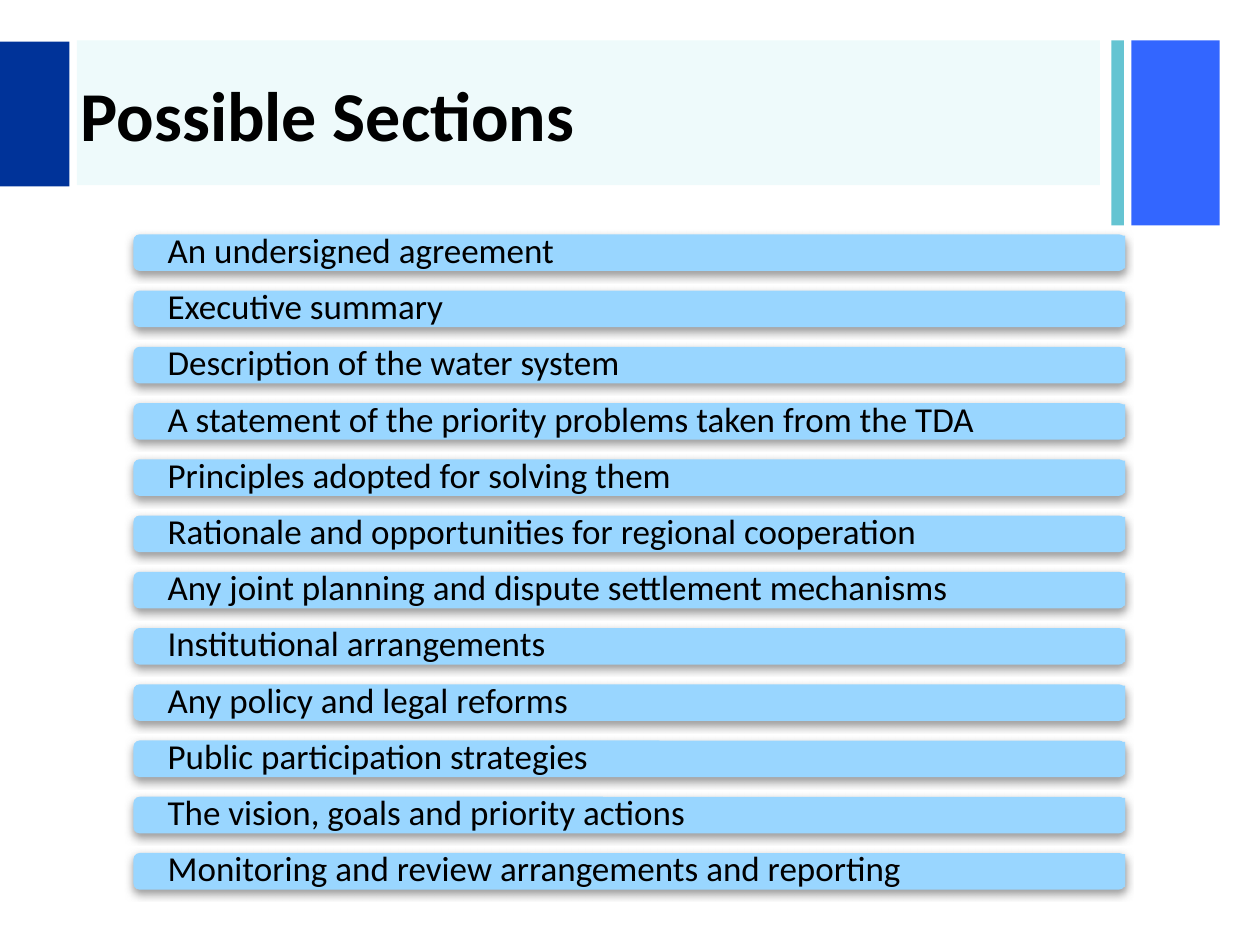
from lxml import etree
from pptx import Presentation
from pptx.dml.color import RGBColor
from pptx.enum.shapes import MSO_SHAPE
from pptx.enum.text import MSO_ANCHOR, PP_ALIGN
from pptx.oxml import parse_xml
from pptx.oxml.ns import nsdecls, qn
from pptx.util import Inches, Pt

RECTANGLE = MSO_SHAPE.RECTANGLE
ROUNDED = MSO_SHAPE.ROUNDED_RECTANGLE
MIDDLE = MSO_ANCHOR.MIDDLE
LEFT = PP_ALIGN.LEFT

BLACK = RGBColor(0x00, 0x00, 0x00)
NAVY = RGBColor(0x00, 0x33, 0x99)
BLUE = RGBColor(0x33, 0x66, 0xFF)
TEAL = RGBColor(0x65, 0xC4, 0xD2)
AQUA = RGBColor(0x14, 0xC5, 0xD0)
SKY = RGBColor(0x99, 0xD6, 0xFF)

TITLE_ONLY = 5
FIRST_TOP, LAST_TOP = 1.86, 6.77
SECTIONS = [
    "An undersigned agreement",
    "Executive summary",
    "Description of the water system",
    "A statement of the priority problems taken from the TDA",
    "Principles adopted for solving them",
    "Rationale and opportunities for regional cooperation",
    "Any joint planning and dispute settlement mechanisms",
    "Institutional arrangements",
    "Any policy and legal reforms",
    "Public participation strategies",
    "The vision, goals and priority actions",
    "Monitoring and review arrangements and reporting",
]
SHADOW = (
    f'<a:effectLst {nsdecls("a")}><a:outerShdw blurRad="{Pt(5)}" dist="{Pt(2)}" '
    'dir="5400000" rotWithShape="0"><a:srgbClr val="808080"><a:alpha val="75000"/>'
    '</a:srgbClr></a:outerShdw></a:effectLst>'
)


def write_text(shape, text, size, bold=False, inset=0.1, vertical_inset=0.05,
               line_spacing=None, space_after=None):
    frame = shape.text_frame
    frame.word_wrap = True
    frame.vertical_anchor = MIDDLE
    frame.margin_left = frame.margin_right = Inches(inset)
    frame.margin_top = frame.margin_bottom = Inches(vertical_inset)
    paragraph = frame.paragraphs[0]
    paragraph.alignment = LEFT
    paragraph.line_spacing = line_spacing
    paragraph.space_after = space_after
    run = paragraph.add_run()
    run.text = text
    run.font.name = "Calibri"
    run.font.size = Pt(size)
    run.font.bold = bold
    run.font.color.rgb = BLACK


class SlideBuilder:
    """Draws the slide's elements in one shared style."""

    def __init__(self, slide):
        self.slide = slide

    def block(self, left, top, width, height, color, kind=RECTANGLE, shapes=None, opacity=None):
        shapes = shapes or self.slide.shapes
        shape = shapes.add_shape(kind, Inches(left), Inches(top), Inches(width), Inches(height))
        shape.shadow.inherit = False
        shape.fill.solid()
        shape.fill.fore_color.rgb = color
        shape.line.fill.background()
        if opacity is not None:
            fill_color = shape.element.spPr.find(qn("a:solidFill"))[0]
            etree.SubElement(fill_color, qn("a:alpha"), val=str(opacity * 1000))
        return shape

    def title(self, text, left, top, width, height):
        title = self.slide.shapes.title
        title.left, title.top = Inches(left), Inches(top)
        title.width, title.height = Inches(width), Inches(height)
        write_text(title, text, size=40, bold=True)
        title.element.getparent().append(title.element)

    def section_bar(self, text, top):
        shapes = self.slide.shapes.add_group_shape().shapes
        bar = self.block(1.06, top, 7.87, 0.29, SKY, kind=ROUNDED, shapes=shapes)
        properties = bar.element.spPr
        properties.replace(properties.find(qn("a:effectLst")), parse_xml(SHADOW))
        label = self.block(1.08, top + 0.01, 7.85, 0.26, SKY, shapes=shapes)
        write_text(label, text, size=20, inset=0.25, vertical_inset=0,
                   line_spacing=0.9, space_after=Pt(7))


def main():
    presentation = Presentation()
    presentation.slide_width, presentation.slide_height = Inches(10), Inches(7.5)
    slide = presentation.slides.add_slide(presentation.slide_layouts[TITLE_ONLY])
    builder = SlideBuilder(slide)
    builder.block(8.98, 0.32, 0.7, 1.47, BLUE)
    builder.block(8.82, 0.32, 0.1, 1.47, TEAL)
    builder.block(0.61, 0.32, 8.12, 1.15, AQUA, opacity=7)
    builder.block(0, 0.33, 0.55, 1.15, NAVY)
    builder.title("Possible Sections", 0.54, 0.34, 8.27, 1.12)
    pitch = (LAST_TOP - FIRST_TOP) / (len(SECTIONS) - 1)
    for index, section in enumerate(SECTIONS):
        builder.section_bar(section, FIRST_TOP + index * pitch)
    presentation.save("out.pptx")


if __name__ == "__main__":
    main()
